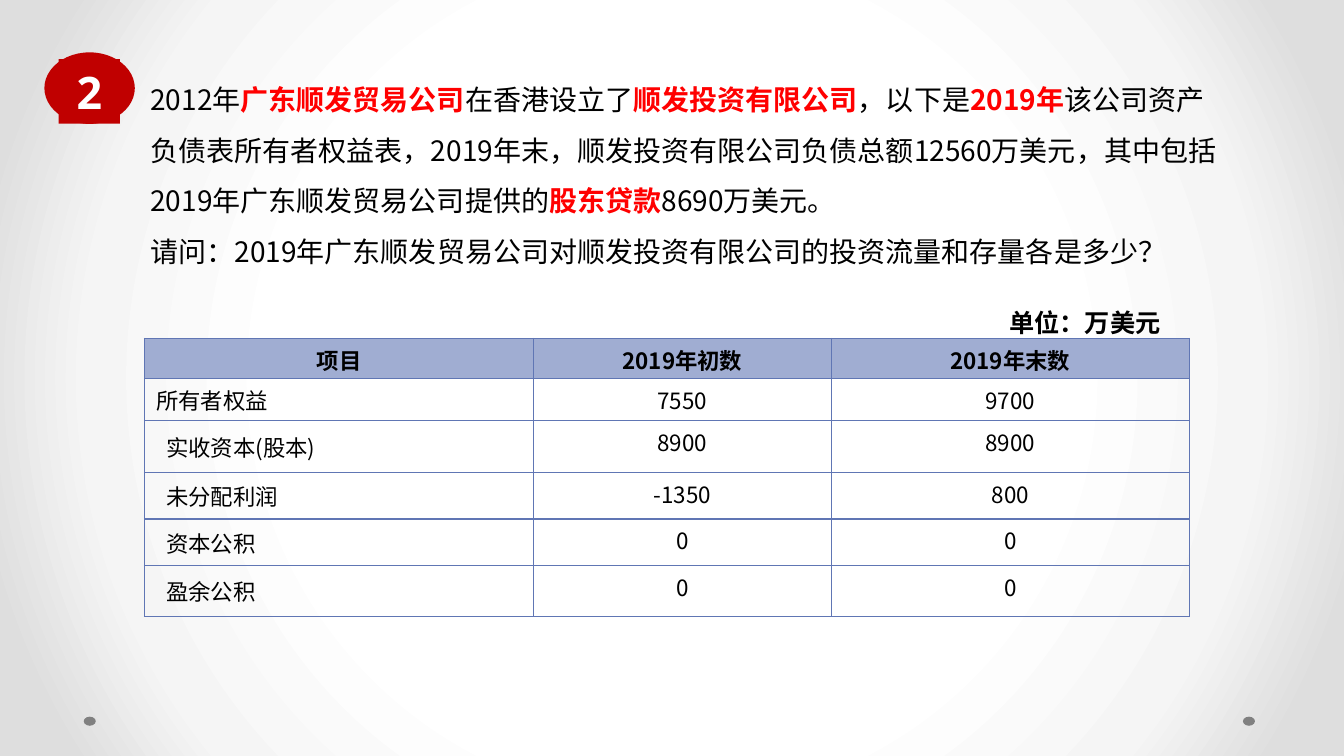
"""Builds a slide with an investment exercise and its table of equity."""
from dataclasses import dataclass

from pptx import Presentation
from pptx.dml.color import RGBColor as Rgb
from pptx.enum.shapes import MSO_SHAPE as Form
from pptx.enum.text import MSO_ANCHOR as Anchor, MSO_AUTO_SIZE as Fit, PP_ALIGN as Align
from pptx.oxml import parse_xml as to_xml
from pptx.oxml.ns import nsdecls, qn
from pptx.util import Pt


@dataclass(frozen=True)
class Theme:
    font: str = "Noto Sans CJK SC"
    mono: str = "Noto Sans Mono"
    ink: str = "000000"
    hot: str = "FF0000"
    badge: str = "C00000"
    white: str = "FFFFFF"
    dot: str = "808080"
    head: str = "A0ADD2"
    rule: str = "6076B4"
    glow: tuple = ((50, "FFFFFF"), (76, "F5F5F5"), (92, "DEDEDE"))
    cell: int = 16
    unit: int = 18
    body: int = 20
    mark: int = 32


T = Theme()

STORY = [
    [("2012年", False), ("广东顺发贸易公司", True), ("在香港设立了", False),
     ("顺发投资有限公司", True), ("，以下是", False), ("2019年", True),
     ("该公司资产负债表所有者权益表，2019年末，顺发投资有限公司负债总额12560万美元，"
      "其中包括2019年广东顺发贸易公司提供的", False),
     ("股东贷款", True), ("8690万美元。", False)],
    [("请问：2019年广东顺发贸易公司对顺发投资有限公司的投资流量和存量各是多少？", False)],
]
ROWS = [
    ("项目", "2019年初数", "2019年末数"),
    ("所有者权益", "7550", "9700"),
    ("实收资本(股本)", "8900", "8900"),
    ("未分配利润", "-1350", "800"),
    ("资本公积", "0", "0"),
    ("盈余公积", "0", "0"),
]
WIDTHS = (278, 212.5, 256)
HEIGHTS = (28.4, 30.2, 37.4, 33, 33.4, 36)


def add_run(para, text, size, color=T.ink, bold=False, face=T.font):
    """Add one styled run to a paragraph."""
    run = para.add_run()
    run.text = text
    font = run.font
    font.size, font.bold, font.name = Pt(size), bold, face
    font.color.rgb = Rgb.from_string(color)
    latin = font._element.find(qn("a:latin"))
    latin.addnext(to_xml(f'<a:ea {nsdecls("a")} typeface="{face}"/>'))


def add_back(slide):
    """Fill the background with a round gradient."""
    slide.background.fill.gradient()
    grad = slide.element.find(".//" + qn("a:gradFill"))
    stops = "".join(f'<a:gs pos="{pos * 1000}"><a:srgbClr val="{color}"/></a:gs>'
                    for pos, color in T.glow)
    fresh = to_xml(
        f'<a:gradFill {nsdecls("a")} rotWithShape="1"><a:gsLst>{stops}</a:gsLst>'
        '<a:path path="circle"><a:fillToRect l="50000" t="50000" r="50000" b="50000"/>'
        '</a:path></a:gradFill>')
    grad.getparent().replace(grad, fresh)


def add_form(shapes, form, box, color):
    """Add a flat filled shape without outline."""
    shape = shapes.add_shape(form, *map(Pt, box))
    shape.shadow.inherit = False
    shape.fill.solid()
    shape.fill.fore_color.rgb = Rgb.from_string(color)
    shape.line.fill.background()
    return shape


def add_box(slide, box, wrap):
    """Add a text box and return its frame."""
    frame = slide.shapes.add_textbox(*map(Pt, box)).text_frame
    frame.word_wrap = wrap
    frame.auto_size = Fit.SHAPE_TO_FIT_TEXT
    frame.margin_left = frame.margin_right = Pt(8)
    frame.margin_top = frame.margin_bottom = Pt(4)
    return frame


def add_story(slide):
    """Add the exercise text with its red key words."""
    frame = add_box(slide, (99.4, 43.2, 785, 153.4), True)
    for num, parts in enumerate(STORY):
        para = frame.add_paragraph() if num else frame.paragraphs[0]
        para.line_spacing = 1.5
        for text, hot in parts:
            add_run(para, text, T.body, T.hot if hot else T.ink, hot)


def add_unit(slide):
    """Add the unit label above the table."""
    frame = add_box(slide, (713, 215.3, 125.3, 30.2), False)
    add_run(frame.paragraphs[0], "单位：万美元", T.unit, bold=True)


def set_rules(cell):
    """Draw thin lines on all four sides of a cell."""
    props = cell._tc.get_or_add_tcPr()
    for num, side in enumerate("LRTB"):
        props.insert(num, to_xml(
            f'<a:ln{side} {nsdecls("a")} w="{Pt(1)}"><a:solidFill>'
            f'<a:srgbClr val="{T.rule}"/></a:solidFill></a:ln{side}>'))


def set_cell(cell, text, row, col):
    """Write and style one table cell."""
    head, label = row == 0, row > 0 and col == 0
    indent = 7.2 if label and row > 1 else 0
    cell.margin_left, cell.margin_right = Pt(8.4 + indent), Pt(8.4)
    cell.margin_top = cell.margin_bottom = Pt(3.6)
    cell.vertical_anchor = Anchor.MIDDLE if label else Anchor.TOP
    if head:
        cell.fill.solid()
        cell.fill.fore_color.rgb = Rgb.from_string(T.head)
    else:
        cell.fill.background()
    set_rules(cell)
    para = cell.text_frame.paragraphs[0]
    para.alignment = Align.LEFT if label else Align.CENTER
    para.space_before = Pt(T.cell * 0.2)
    add_run(para, text, T.cell, bold=head)


def add_grid(slide):
    """Add the table of equity."""
    box = (103.2, 241.8, sum(WIDTHS), sum(HEIGHTS))
    grid = slide.shapes.add_table(len(ROWS), len(WIDTHS), *map(Pt, box)).table
    grid.first_row = grid.horz_banding = False
    for col, width in zip(grid.columns, WIDTHS):
        col.width = Pt(width)
    for row, height in zip(grid.rows, HEIGHTS):
        row.height = Pt(height)
    for row, texts in enumerate(ROWS):
        for col, text in enumerate(texts):
            set_cell(grid.cell(row, col), text, row, col)


def add_badge(slide):
    """Add the red number badge as a group."""
    group = slide.shapes.add_group_shape()
    add_form(group.shapes, Form.OVAL, (31.7, 37.4, 64.6, 51.1), T.badge)
    plate = add_form(group.shapes, Form.RECTANGLE, (41.8, 42.3, 43.9, 46.1), T.badge)
    para = plate.text_frame.paragraphs[0]
    para.alignment = Align.CENTER
    add_run(para, "2", T.mark, T.white, True, T.mono)


def main():
    """Build and save the slide."""
    deck = Presentation()
    deck.slide_width, deck.slide_height = Pt(960), Pt(540)
    slide = deck.slides.add_slide(deck.slide_layouts[6])
    add_back(slide)
    for left in (887.8, 59.8):
        add_form(slide.shapes, Form.OVAL, (left, 511.9, 8.6, 6.5), T.dot)
    add_story(slide)
    add_grid(slide)
    add_unit(slide)
    add_badge(slide)
    deck.save("out.pptx")


if __name__ == "__main__":
    main()
